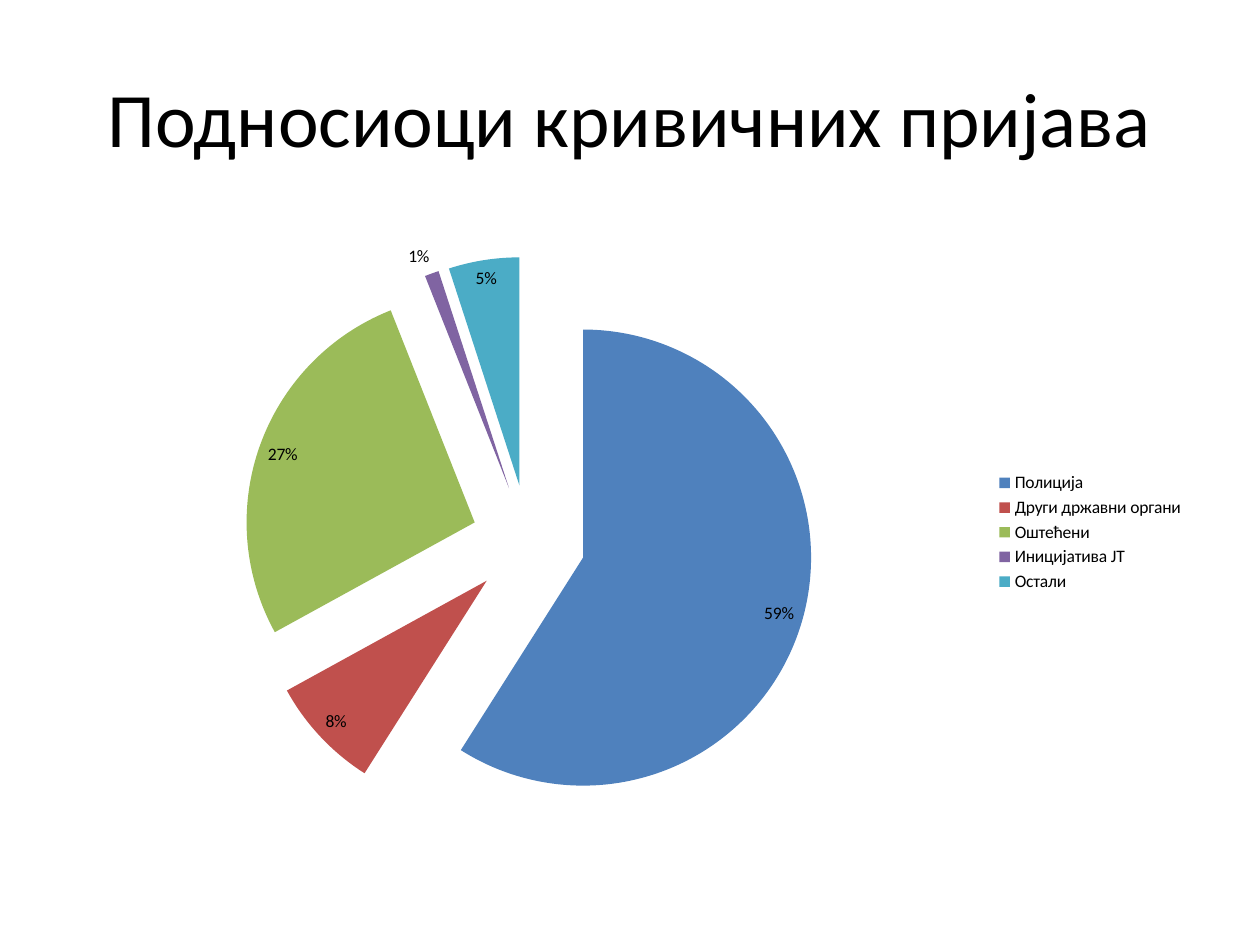
import dataclasses

import lxml.etree
import pptx
import pptx.chart.data
import pptx.dml.color
import pptx.enum.chart
import pptx.enum.text
import pptx.oxml.ns
import pptx.util

Inches = pptx.util.Inches
TITLE_ONLY_LAYOUT = 5


@dataclasses.dataclass(frozen=True)
class Theme:
    font: str = "Calibri"
    title_size: int = 44
    chart_size: int = 10
    text_color: str = "000000"
    slice_colors: tuple = ("4F81BD", "C0504D", "9BBB59", "8064A2", "4BACC6")


class SlideBuilder:
    def __init__(self, slide, theme):
        self.slide = slide
        self.theme = theme

    def style_font(self, font, size):
        font.name = self.theme.font
        font.size = pptx.util.Pt(size)
        font.color.rgb = pptx.dml.color.RGBColor.from_string(self.theme.text_color)

    def add_title(self, text, left, top, width, height):
        title = self.slide.shapes.title
        title.left, title.top, title.width, title.height = left, top, width, height
        title.text_frame.text = text
        title.text_frame.vertical_anchor = pptx.enum.text.MSO_ANCHOR.MIDDLE
        para = title.text_frame.paragraphs[0]
        para.alignment = pptx.enum.text.PP_ALIGN.CENTER
        self.style_font(para.font, self.theme.title_size)

    def add_exploded_pie(self, shares, explosion, left, top, width, height):
        """Draw a pie from a label-to-value dict, its slices pulled out by a percentage."""
        data = pptx.chart.data.CategoryChartData()
        data.categories = list(shares)
        data.add_series("Series 1", list(shares.values()))
        chart = self.slide.shapes.add_chart(
            pptx.enum.chart.XL_CHART_TYPE.PIE, left, top, width, height, data
        ).chart
        chart.has_title = False
        self.style_font(chart.font, self.theme.chart_size)

        chart.has_legend = True
        chart.legend.position = pptx.enum.chart.XL_LEGEND_POSITION.RIGHT
        chart.legend.include_in_layout = False

        plot = chart.plots[0]
        plot.vary_by_categories = True
        series = plot.series[0]
        self.explode(series, explosion)
        for index, color in enumerate(self.theme.slice_colors):
            fill = series.points[index].format.fill
            fill.solid()
            fill.fore_color.rgb = pptx.dml.color.RGBColor.from_string(color)

        labels = series.data_labels
        labels.show_percentage = True
        labels.show_value = False
        labels.number_format = "0%"
        labels.number_format_is_linked = False
        labels.position = pptx.enum.chart.XL_LABEL_POSITION.BEST_FIT
        self.style_font(labels.font, self.theme.chart_size)

    @staticmethod
    def explode(series, percent):
        qualified = pptx.oxml.ns.qn
        element = lxml.etree.Element(qualified("c:explosion"), val=str(percent))
        series._element.find(qualified("c:tx")).addnext(element)


def main():
    deck = pptx.Presentation()
    deck.slide_width, deck.slide_height = Inches(10), Inches(7.5)
    slide = deck.slides.add_slide(deck.slide_layouts[TITLE_ONLY_LAYOUT])
    builder = SlideBuilder(slide, Theme())

    left, width = Inches(0.5), Inches(9)
    builder.add_title(
        "Подносиоци кривичних пријава", left, Inches(0.3), width, Inches(1.25)
    )
    complaint_sources = {
        "Полиција": 59,
        "Други државни органи": 8,
        "Оштећени": 27,
        "Иницијатива ЈТ": 1,
        "Остали": 5,
    }
    builder.add_exploded_pie(
        complaint_sources, 25, left, Inches(1.75), width, Inches(4.95)
    )
    deck.save("out.pptx")


if __name__ == "__main__":
    main()
